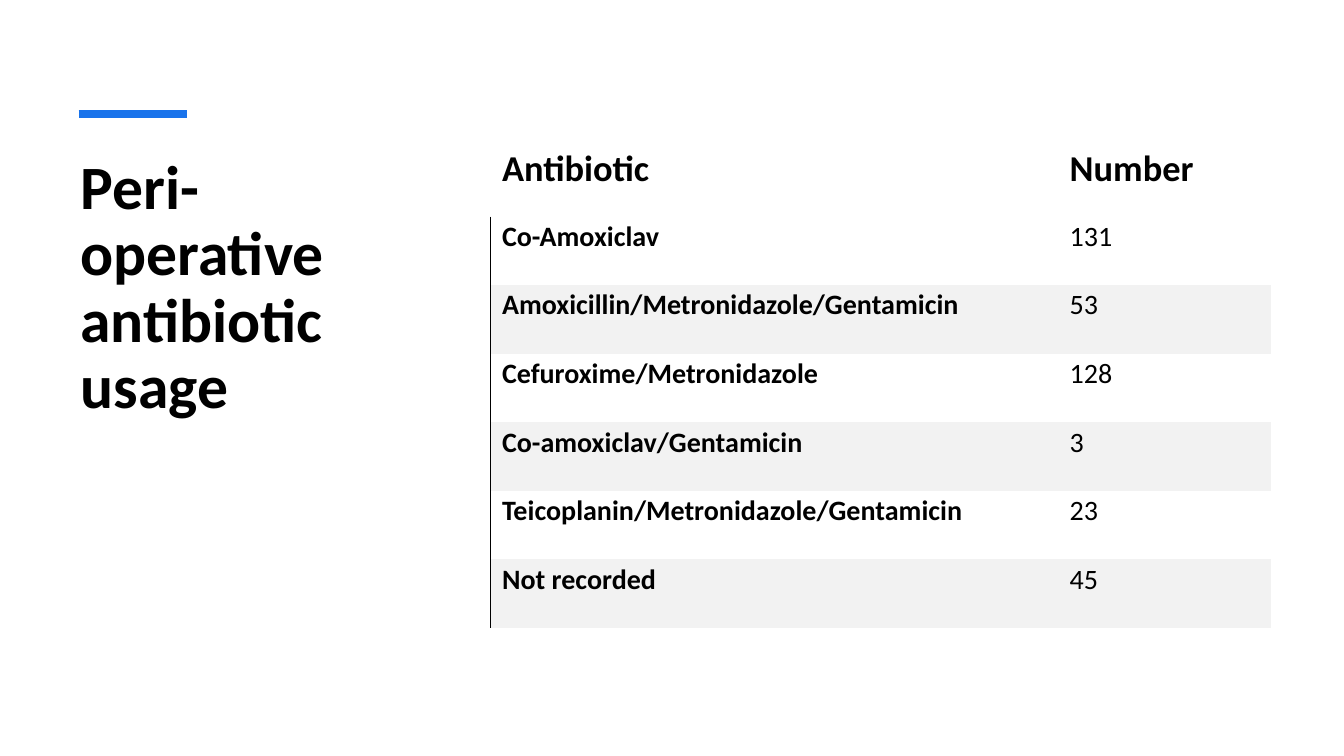
"""Build the slide on peri-operative antibiotic usage."""
import dataclasses

import lxml.etree
import pptx
import pptx.dml.color
import pptx.enum.shapes
import pptx.enum.text
import pptx.oxml.ns
import pptx.util

SCALE = 9144
FONT = "Calibri"
COLORS = {"ink": "000000", "accent": "1973EB", "band": "F2F2F2"}
PLAIN = "{2D5ABB26-0587-4C30-8999-92F81FD0307C}"
ANCHOR = pptx.enum.text.MSO_ANCHOR
ALIGN = pptx.enum.text.PP_ALIGN


@dataclasses.dataclass(frozen=True)
class Entry:
    drug: str
    count: str
    size: int = 20
    head: bool = False


ENTRIES = [
    Entry("Antibiotic", "Number", size=26, head=True),
    Entry("Co-Amoxiclav", "131"),
    Entry("Amoxicillin/Metronidazole/Gentamicin", "53"),
    Entry("Cefuroxime/Metronidazole", "128"),
    Entry("Co-amoxiclav/Gentamicin", "3"),
    Entry("Teicoplanin/Metronidazole/Gentamicin", "23"),
    Entry("Not recorded", "45"),
]


def px(size: int) -> pptx.util.Emu:
    return pptx.util.Emu(size * SCALE)


def color(name: str) -> pptx.dml.color.RGBColor:
    return pptx.dml.color.RGBColor.from_string(COLORS[name])


def write(frame, text: str, *, size: int, bold: bool = True,
          align=ALIGN.LEFT, space: float = 1.0) -> None:
    frame.word_wrap = True
    para = frame.paragraphs[0]
    para.alignment = align
    para.line_spacing = space
    run = para.add_run()
    run.text = text
    run.font.name = FONT
    run.font.size = pptx.util.Pt(size)
    run.font.bold = bold
    run.font.color.rgb = color("ink")


def add_title(slide, text: str) -> None:
    box = slide.shapes.add_textbox(px(70), px(150), px(355), px(295))
    write(box.text_frame, text, size=44, space=0.9)


def add_rule(slide) -> None:
    rule = slide.shapes.add_connector(
        pptx.enum.shapes.MSO_CONNECTOR.STRAIGHT, px(78), px(113), px(185), px(113))
    rule.line.color.rgb = color("accent")
    rule.line.width = pptx.util.Pt(6)
    lxml.etree.SubElement(rule._element.spPr, pptx.oxml.ns.qn("a:effectLst"))


def left_edge(cell) -> None:
    qn = pptx.oxml.ns.qn
    edge = lxml.etree.Element(qn("a:lnL"), w=str(pptx.util.Pt(0.75)))
    fill = lxml.etree.SubElement(edge, qn("a:solidFill"))
    lxml.etree.SubElement(fill, qn("a:srgbClr"), val=COLORS["ink"])
    cell._tc.get_or_add_tcPr().insert(0, edge)


def fill_cell(cell, text: str, entry: Entry, first: bool, band: bool) -> None:
    cell.margin_left, cell.margin_top = px(12), px(3)
    cell.margin_right, cell.margin_bottom = px(31), px(25)
    cell.vertical_anchor = ANCHOR.BOTTOM if entry.head else ANCHOR.TOP
    write(cell.text_frame, text, size=entry.size,
          bold=first or entry.head, align=ALIGN.JUSTIFY)
    if band:
        cell.fill.solid()
        cell.fill.fore_color.rgb = color("band")
    else:
        cell.fill.background()
    if first and not entry.head:
        left_edge(cell)


def add_usage(slide, entries: list[Entry]) -> None:
    frame = slide.shapes.add_table(
        len(entries), 2, px(486), px(136), px(775), px(487))
    table = frame.table
    table.first_row = table.horz_banding = False
    table._tbl.tblPr.find(pptx.oxml.ns.qn("a:tableStyleId")).text = PLAIN
    for col, width in zip(table.columns, (563, 212)):
        col.width = px(width)
    for row, entry in enumerate(entries):
        table.rows[row].height = px(79 if entry.head else 68)
        band = row > 0 and row % 2 == 0
        for col, text in enumerate((entry.drug, entry.count)):
            fill_cell(table.cell(row, col), text, entry, col == 0, band)


def main() -> None:
    deck = pptx.Presentation()
    deck.slide_width, deck.slide_height = px(1333), px(750)
    slide = deck.slides.add_slide(deck.slide_layouts[6])
    add_title(slide, "Peri-operative antibiotic usage")
    add_rule(slide)
    add_usage(slide, ENTRIES)
    deck.save("out.pptx")


if __name__ == "__main__":
    main()
